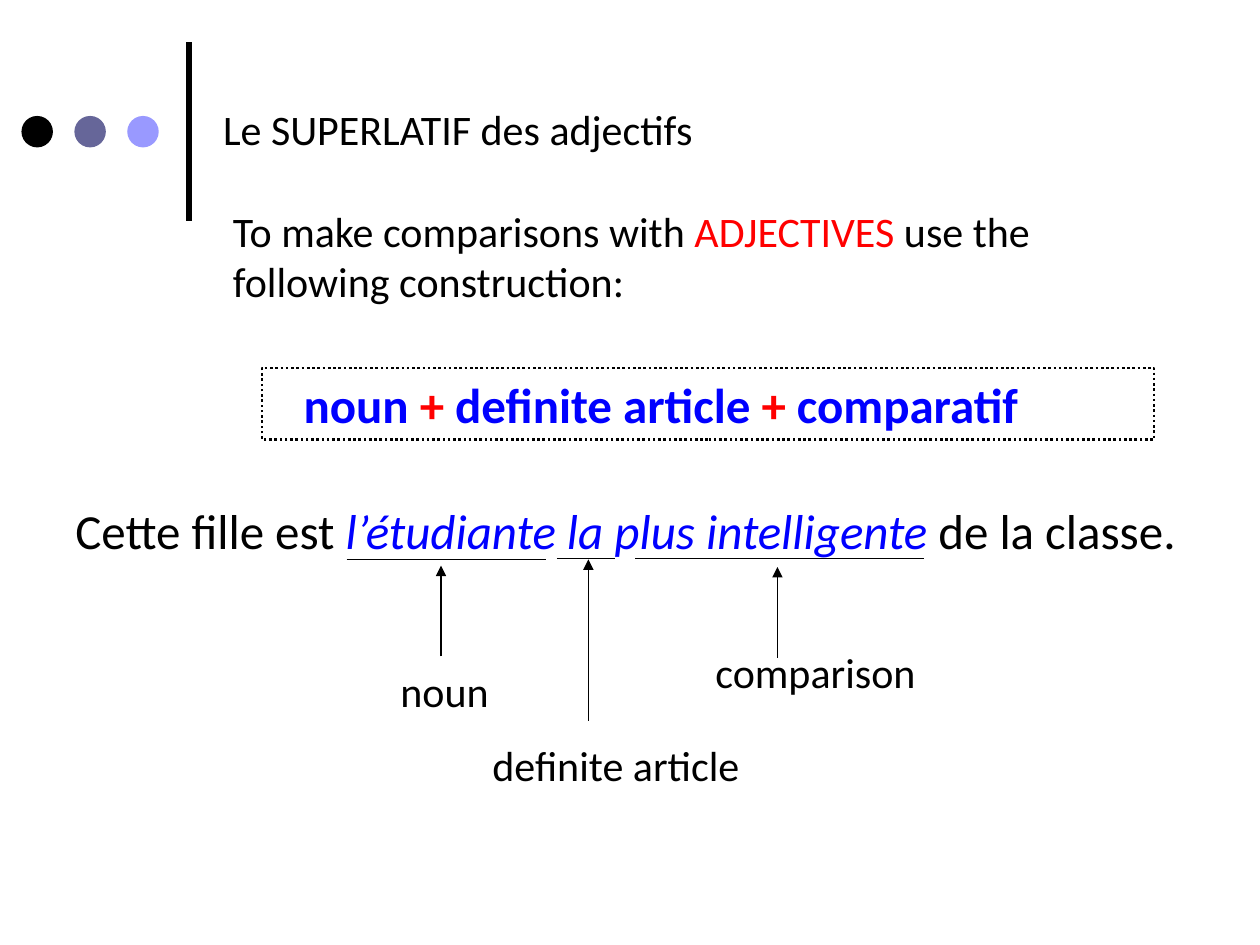
from lxml import etree
from pptx import Presentation
from pptx.dml.color import RGBColor
from pptx.enum.dml import MSO_LINE
from pptx.enum.shapes import MSO_CONNECTOR, MSO_SHAPE
from pptx.enum.text import MSO_ANCHOR, PP_ALIGN
from pptx.oxml.ns import qn
from pptx.util import Inches, Pt

BLACK = RGBColor(0x00, 0x00, 0x00)
RED = RGBColor(0xFF, 0x00, 0x00)
BLUE = RGBColor(0x00, 0x00, 0xFF)
SLATE = RGBColor(0x66, 0x66, 0x99)
LILAC = RGBColor(0x99, 0x99, 0xFF)
STRAIGHT = MSO_CONNECTOR.STRAIGHT
OVAL = MSO_SHAPE.OVAL
RECTANGLE = MSO_SHAPE.RECTANGLE
DOTTED = MSO_LINE.ROUND_DOT
LEFT = PP_ALIGN.LEFT
TOP = MSO_ANCHOR.TOP

deck = Presentation()
deck.slide_width, deck.slide_height = Inches(10), Inches(7.5)
page = deck.slides.add_slide(deck.slide_layouts[5])


def write(box, size, spans, bold=False):
    """Fill a box with one left-aligned paragraph of (text, colour, italic) spans."""
    frame = box.text_frame
    frame.word_wrap = True
    frame.vertical_anchor = TOP
    para = frame.paragraphs[0]
    para.alignment = LEFT
    para.font.name, para.font.size, para.font.bold = "Calibri", Pt(size), bold
    for text, colour, italic in spans:
        span = para.add_run()
        span.text = text
        span.font.color.rgb = colour
        if italic:
            span.font.italic = True


def draw_line(x1, y1, x2, y2, width=0.75, arrow=False):
    line = page.shapes.add_connector(
        STRAIGHT, Inches(x1), Inches(y1), Inches(x2), Inches(y2))
    line.line.color.rgb = BLACK
    line.line.width = Pt(width)
    if arrow:
        etree.SubElement(line.line._get_or_add_ln(), qn("a:tailEnd"), type="triangle")
    etree.SubElement(line._element.spPr, qn("a:effectLst"))


# Header ornament: three dots and a vertical bar
draw_line(1.5, 1.75, 1.5, 0.33, width=3)
for column, colour in enumerate((BLACK, SLATE, LILAC)):
    dot = page.shapes.add_shape(
        OVAL, Inches(0.17 + 0.42 * column), Inches(0.92), Inches(0.25), Inches(0.25))
    dot.shadow.inherit = False
    dot.fill.solid()
    dot.fill.fore_color.rgb = colour
    dot.line.fill.background()

# Title
title = page.shapes.title
title.left, title.top = Inches(1.67), Inches(0.77)
title.width, title.height = Inches(8.33), Inches(0.5)
write(title, 24, [("Le SUPERLATIF des adjectifs", BLACK, False)])

# Formula in a dotted frame
formula = page.shapes.add_shape(
    RECTANGLE, Inches(2.08), Inches(2.92), Inches(7.08), Inches(0.57))
formula.shadow.inherit = False
formula.fill.background()
formula.line.color.rgb = BLACK
formula.line.width = Pt(1.5)
formula.line.dash_style = DOTTED
formula.text_frame.margin_left = Inches(0.33)
write(formula, 28, [
    ("noun ", BLUE, False), ("+", RED, False), (" definite article ", BLUE, False),
    ("+ ", RED, False), ("comparatif", BLUE, False)], bold=True)

# Introduction, example sentence and its labels
texts = [
    (1.75, 1.58, 7.75, 0.91, 24, [
        ("To make comparisons with ", BLACK, False), ("ADJECTIVES", RED, False),
        (" use the following construction:", BLACK, False)]),
    (0.5, 3.92, 9.11, 0.57, 28, [
        ("Cette fille est ", BLACK, False),
        ("l’étudiante la plus intelligente ", BLUE, True),
        ("de la classe.", BLACK, False)]),
    (3.08, 5.23, 1.11, 0.5, 24, [("noun", BLACK, False)]),
    (3.81, 5.82, 2.48, 0.5, 24, [("definite article", BLACK, False)]),
    (5.58, 5.08, 2.48, 0.5, 24, [("comparison", BLACK, False)]),
]
for left, top, width, height, size, spans in texts:
    box = page.shapes.add_textbox(
        Inches(left), Inches(top), Inches(width), Inches(height))
    write(box, size, spans)

# Arrows from the labels up to the sentence
for x, bottom, tip in ((3.5, 5.21, 4.49), (4.67, 5.72, 4.44), (6.17, 5.22, 4.5)):
    draw_line(x, bottom, x, tip, arrow=True)

# Underlines beneath noun, comparison and article
for start, end, y in ((2.75, 4.33, 4.44), (5.04, 7.33, 4.43), (4.42, 4.88, 4.43)):
    draw_line(start, y, end, y)

deck.save("out.pptx")
